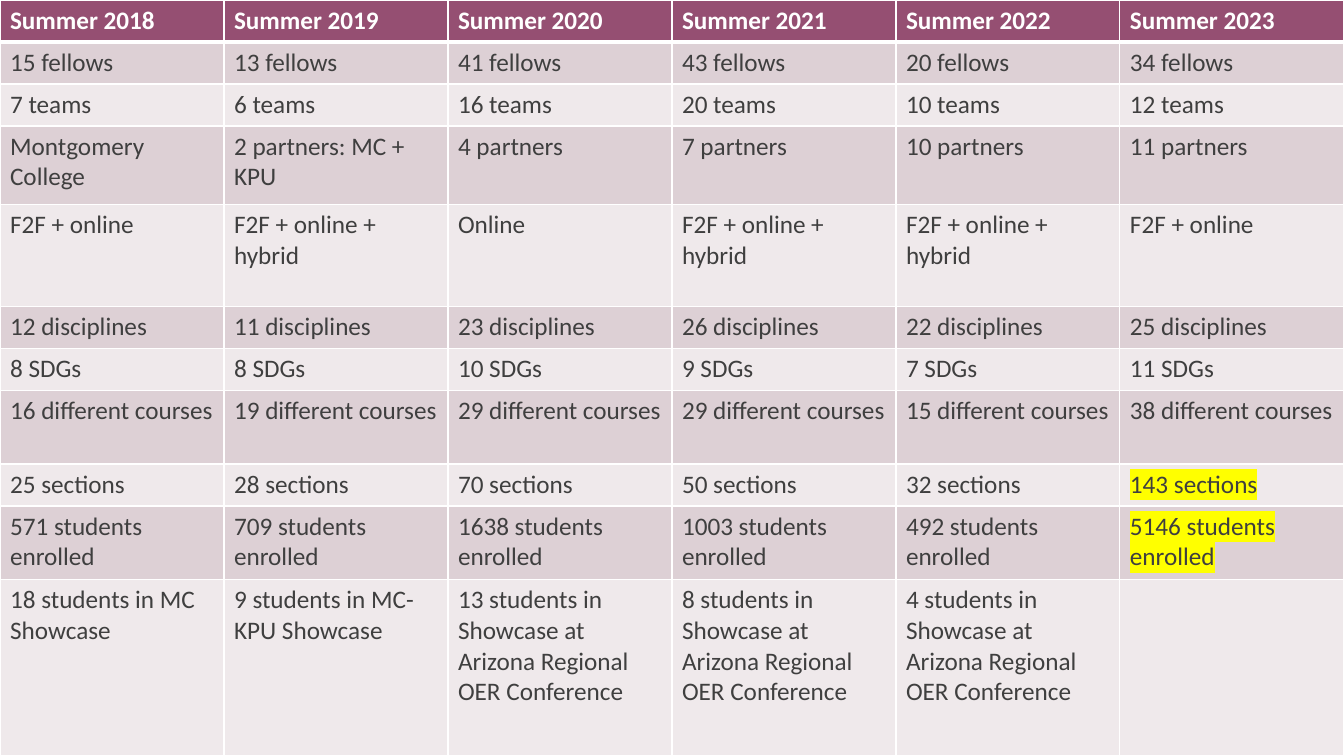
from lxml import etree
from pptx import Presentation
from pptx.dml.color import RGBColor
from pptx.oxml.ns import qn
from pptx.util import Emu, Pt

PX = 9525
SLIDE_WIDTH, SLIDE_HEIGHT = 1280, 720
FONT = "Calibri"
WHITE, PLUM, INK, YELLOW = "FFFFFF", "954F72", "3F3F3F", "FFFF00"
ROW_FILLS = ("EFE9EB", "DDD0D5")
HYBRID = "F2F + online + hybrid"
CONFERENCE = "students in Showcase at Arizona Regional OER Conference"


def counted(numbers, unit):
    return [f"{number} {unit}" for number in numbers]


SUMMERS = [f"Summer {year}" for year in range(2018, 2024)]
ROWS = [
    (40, SUMMERS),
    (40, counted((15, 13, 41, 43, 20, 34), "fellows")),
    (40, counted((7, 6, 16, 20, 10, 12), "teams")),
    (75, ["Montgomery College", "2 partners: MC + KPU"]
     + counted((4, 7, 10, 11), "partners")),
    (97, ["F2F + online", HYBRID, "Online", HYBRID, HYBRID, "F2F + online"]),
    (40, counted((12, 11, 23, 26, 22, 25), "disciplines")),
    (40, counted((8, 8, 10, 9, 7, 11), "SDGs")),
    (70, counted((16, 19, 29, 29, 15, 38), "different courses")),
    (40, counted((25, 28, 70, 50, 32, 143), "sections")),
    (70, counted((571, 709, 1638, 1003, 492, 5146), "students enrolled")),
    (168, ["18 students in MC Showcase", "9 students in MC-KPU Showcase"]
     + counted((13, 8, 4), CONFERENCE) + [""]),
]
HIGHLIGHTED = ("143 sections", "5146 students enrolled")


def px(length):
    return Emu(length * PX)


def color(value):
    return RGBColor.from_string(value)


def add_solid_fill(parent, value):
    fill = etree.SubElement(parent, qn("a:solidFill"))
    etree.SubElement(fill, qn("a:srgbClr")).set("val", value)


def set_borders(cell, top, bottom):
    properties = cell._tc.get_or_add_tcPr()
    widths = {"lnL": 1, "lnR": 1, "lnT": top, "lnB": bottom}
    for side, width in widths.items():
        line = etree.SubElement(properties, qn(f"a:{side}"))
        line.set("w", str(Pt(width)))
        add_solid_fill(line, WHITE)


def highlight(run):
    latin = run._r.get_or_add_rPr().find(qn("a:latin"))
    marker = etree.Element(qn("a:highlight"))
    etree.SubElement(marker, qn("a:srgbClr")).set("val", YELLOW)
    latin.addprevious(marker)


def write_cell(cell, text, is_header):
    if not text:
        return
    run = cell.text_frame.paragraphs[0].add_run()
    run.text = text
    run.font.size = Pt(18)
    run.font.name = FONT
    run.font.bold = is_header
    run.font.color.rgb = color(WHITE if is_header else INK)
    if text in HIGHLIGHTED:
        highlight(run)


def add_summer_table(slide, left, top, width, height):
    frame = slide.shapes.add_table(
        len(ROWS), len(SUMMERS), px(left), px(top), px(width), px(height))
    table = frame.table
    for column in table.columns:
        column.width = Emu(px(width) // len(SUMMERS))
    for row_index, (row_height, texts) in enumerate(ROWS):
        table.rows[row_index].height = px(row_height)
        is_header = row_index == 0
        for column_index, text in enumerate(texts):
            cell = table.cell(row_index, column_index)
            set_borders(cell, 3 if row_index == 1 else 1, 3 if is_header else 1)
            cell.fill.solid()
            cell.fill.fore_color.rgb = color(
                PLUM if is_header else ROW_FILLS[row_index % 2])
            write_cell(cell, text, is_header)


def main():
    presentation = Presentation()
    presentation.slide_width = px(SLIDE_WIDTH)
    presentation.slide_height = px(SLIDE_HEIGHT)
    slide = presentation.slides.add_slide(presentation.slide_layouts[6])
    add_summer_table(slide, 0, 0, SLIDE_WIDTH, SLIDE_HEIGHT)
    presentation.save("out.pptx")


if __name__ == "__main__":
    main()
